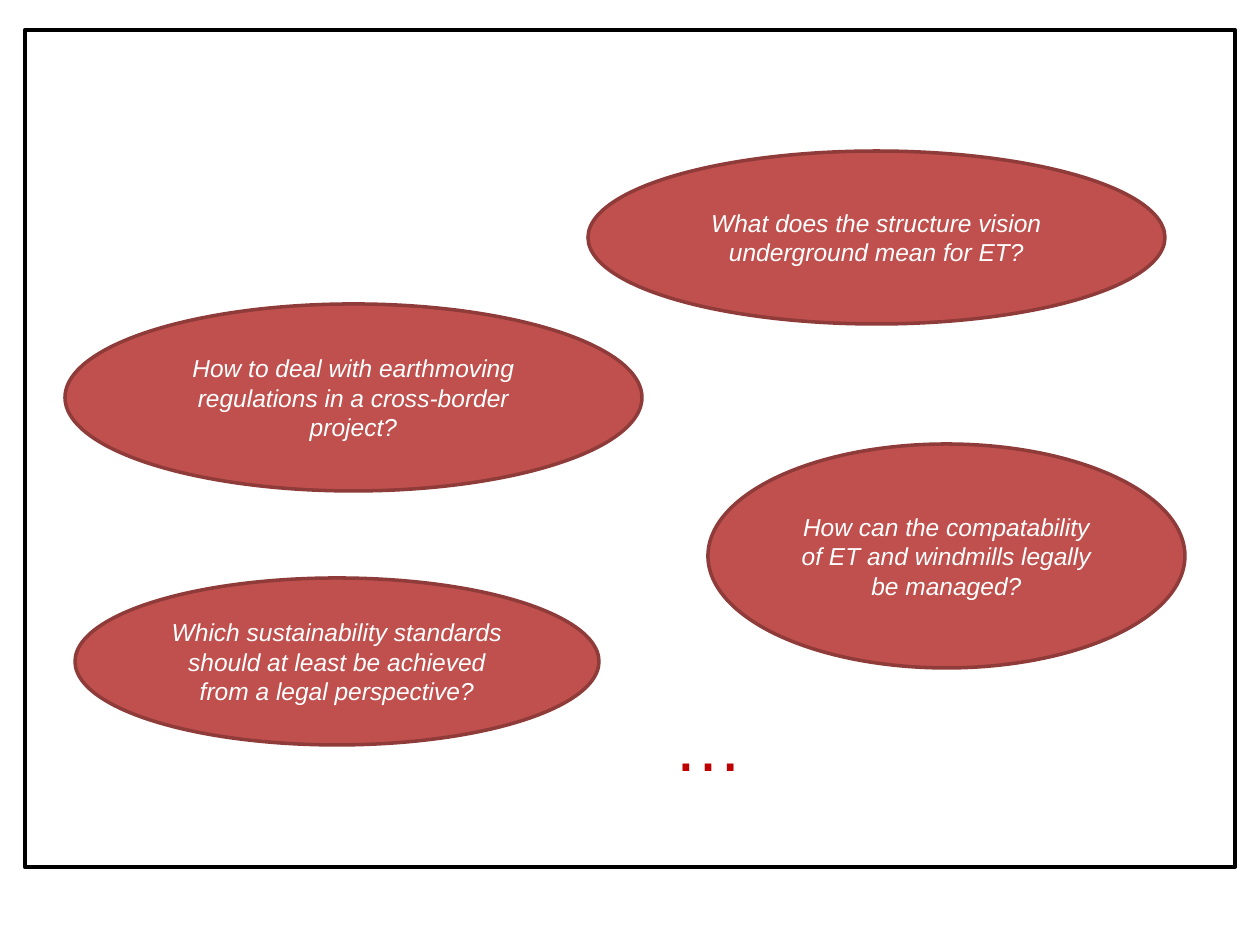
from pptx import Presentation
from pptx.dml.color import RGBColor
from pptx.enum.shapes import MSO_SHAPE
from pptx.enum.text import MSO_ANCHOR, MSO_AUTO_SIZE, PP_ALIGN
from pptx.util import Pt

PX = 914400 // 126
BLACK = RGBColor(0x00, 0x00, 0x00)
WHITE = RGBColor(0xFF, 0xFF, 0xFF)
BRICK = RGBColor(0xC0, 0x50, 0x4D)
DARK_BRICK = RGBColor(0x8E, 0x3B, 0x39)
RED = RGBColor(0xC0, 0x00, 0x00)


def write(frame, text, *, size, color, italic=False, align=PP_ALIGN.LEFT, anchor=MSO_ANCHOR.TOP):
    frame.word_wrap = True
    frame.vertical_anchor = anchor
    paragraph = frame.paragraphs[0]
    paragraph.alignment = align
    run = paragraph.add_run()
    run.text = text
    run.font.name = "Arial"
    run.font.size = Pt(size)
    run.font.italic = italic
    run.font.color.rgb = color


def add_outlined(kind, box, line_color, line_width):
    shape = slide.shapes.add_shape(kind, *(length * PX for length in box))
    shape.shadow.inherit = False
    shape.line.color.rgb = line_color
    shape.line.width = Pt(line_width)
    return shape


prs = Presentation()
prs.slide_width = 1260 * PX
prs.slide_height = 945 * PX
slide = prs.slides.add_slide(prs.slide_layouts[6])

border = add_outlined(MSO_SHAPE.RECTANGLE, (25, 30, 1210, 837), BLACK, 2.5)
border.fill.background()

questions = [
    ("How to deal with earthmoving regulations in a cross-border project?", (65, 304, 577, 187)),
    ("What does the structure vision underground mean for ET?", (588, 151, 577, 173)),
    ("How can the compatability of ET and windmills legally be managed?", (708, 444, 477, 224)),
    ("Which sustainability standards should at least be achieved from a legal perspective?",
     (75, 578, 524, 167)),
]
for question, box in questions:
    bubble = add_outlined(MSO_SHAPE.OVAL, box, DARK_BRICK, 2)
    bubble.fill.solid()
    bubble.fill.fore_color.rgb = BRICK
    write(bubble.text_frame, question, size=14, color=WHITE, italic=True,
          align=PP_ALIGN.CENTER, anchor=MSO_ANCHOR.MIDDLE)

more = slide.shapes.add_textbox(661 * PX, 695 * PX, 273 * PX, 97 * PX)
write(more.text_frame, "…", size=40, color=RED)
more.text_frame.auto_size = MSO_AUTO_SIZE.SHAPE_TO_FIT_TEXT

prs.save("out.pptx")
